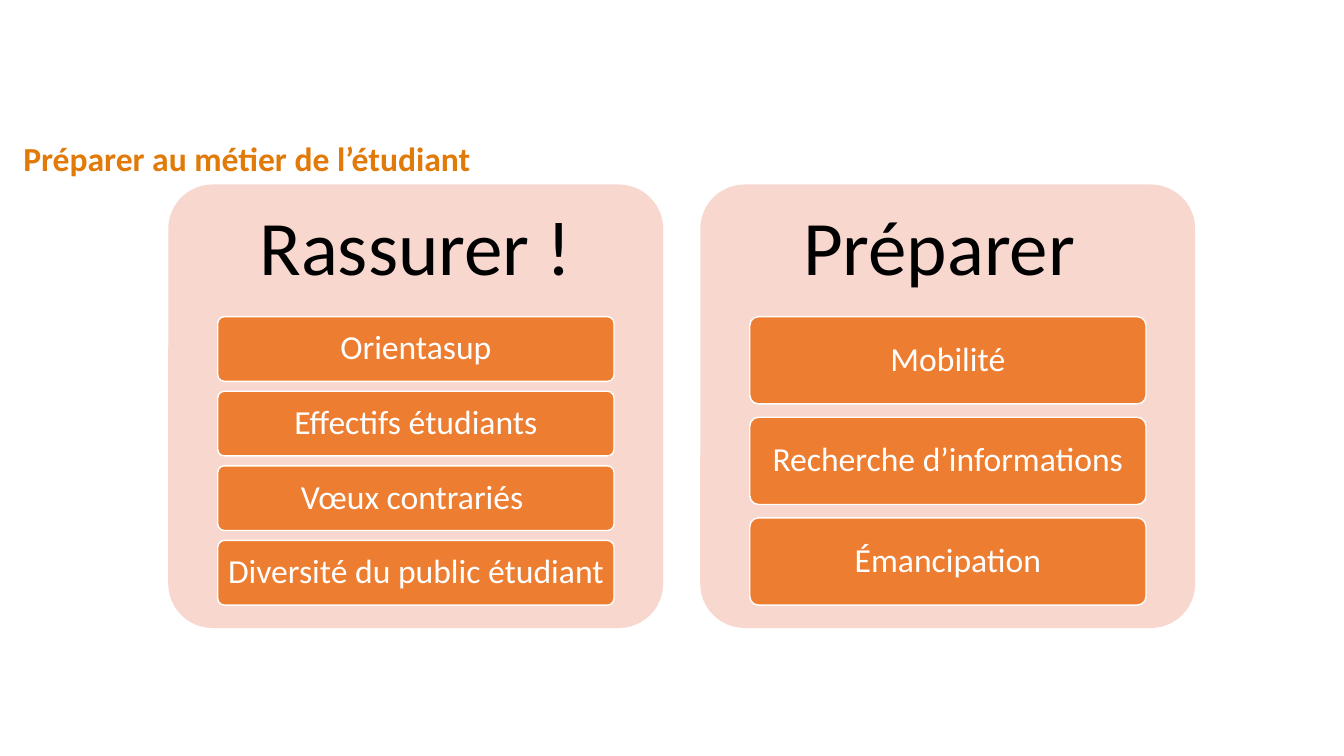
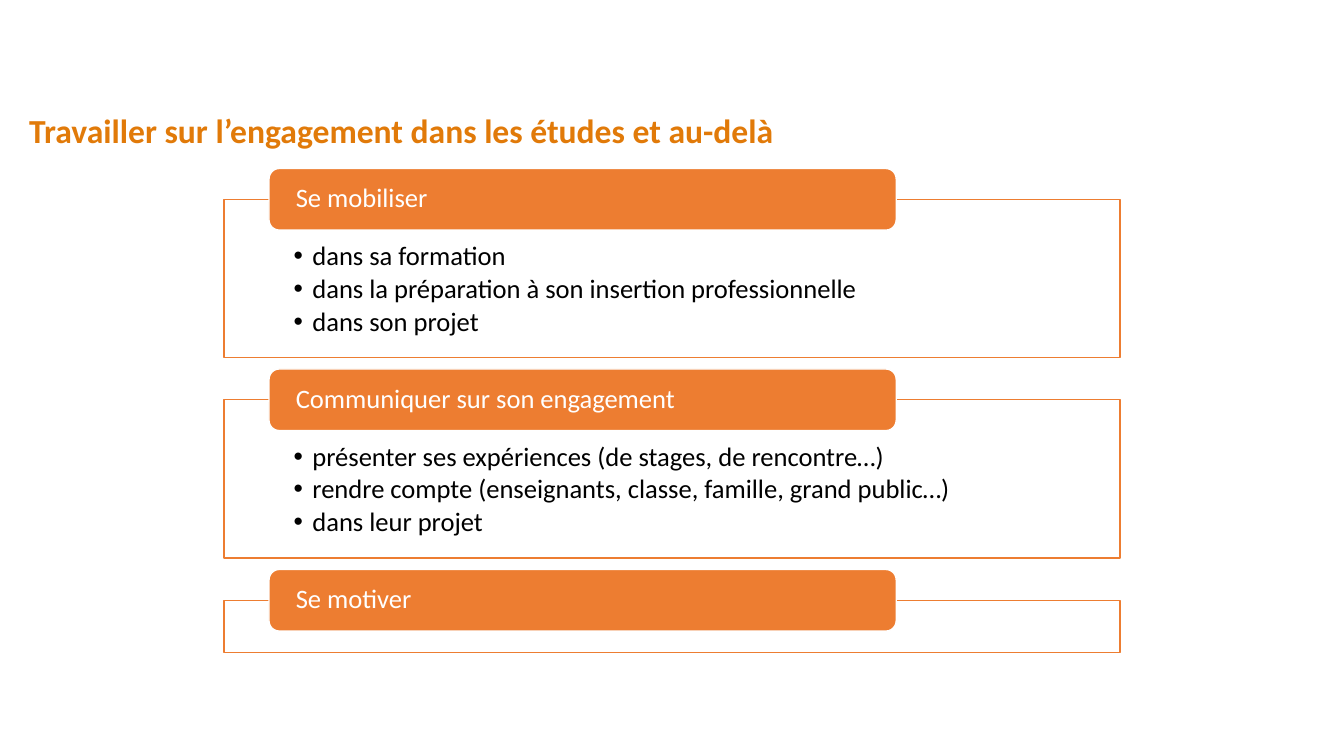
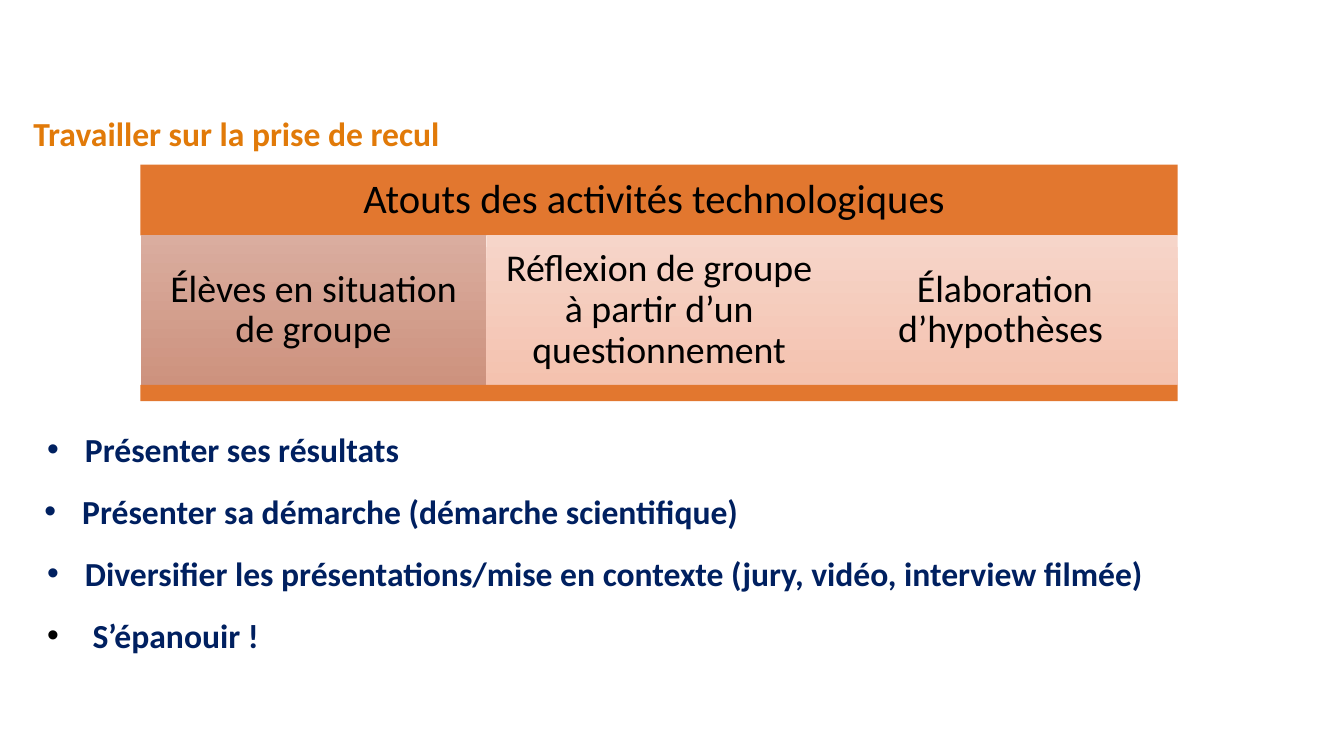
import pptx
import pptx.util
import pptx.dml.color
import pptx.enum.shapes
import pptx.enum.text
import lxml.etree

Pt = pptx.util.Pt
RGBColor = pptx.dml.color.RGBColor
Kind = pptx.enum.shapes.MSO_SHAPE
Align = pptx.enum.text.PP_ALIGN
Anchor = pptx.enum.text.MSO_ANCHOR

FONT = "Calibri"
GOLD = RGBColor(0xE1, 0x7A, 0x09)
ORANGE = RGBColor(0xED, 0x7D, 0x31)
RUST = RGBColor(0xE2, 0x77, 0x2F)
PINK = RGBColor(0xF8, 0xD7, 0xCE)
NAVY = RGBColor(0x00, 0x20, 0x60)
BLACK = RGBColor(0, 0, 0)
WHITE = RGBColor(0xFF, 0xFF, 0xFF)
DARK = [RGBColor(0xDA, 0xAD, 0x9F), RGBColor(0xCD, 0x92, 0x7E)]
LIGHT = [RGBColor(0xF6, 0xD5, 0xC9), RGBColor(0xF4, 0xC2, 0xAF)]


def write(shape, lines, size, color, bold=False, align=Align.LEFT, anchor=Anchor.MIDDLE,
          inset=(7.2, 3.6), space=0.9, after=0, marks=None):
    frame = shape.text_frame
    frame.word_wrap = True
    frame.auto_size = pptx.enum.text.MSO_AUTO_SIZE.NONE
    frame.vertical_anchor = anchor
    frame.margin_left = frame.margin_right = Pt(inset[0])
    frame.margin_top = frame.margin_bottom = Pt(inset[1])
    for i, line in enumerate(lines):
        para = frame.paragraphs[0] if i == 0 else frame.add_paragraph()
        para.alignment = align
        para.line_spacing = space
        para.space_before = Pt(0)
        para.space_after = Pt(after)
        run = para.add_run()
        run.text = line
        run.font.name = FONT
        run.font.size = Pt(size)
        run.font.bold = bold
        run.font.color.rgb = color
        if marks:
            left, hang, tint = marks[i]
            props = para._p.get_or_add_pPr()
            props.set("marL", str(Pt(left)))
            props.set("indent", str(Pt(-hang)))
            ns = "{" + props.nsmap["a"] + "}"
            hue = lxml.etree.SubElement(props, ns + "buClr")
            lxml.etree.SubElement(hue, ns + "srgbClr", val=str(tint))
            lxml.etree.SubElement(props, ns + "buFont", typeface="Arial")
            lxml.etree.SubElement(props, ns + "buChar", char="•")


def block(slide, kind, at, fill, line=None, round=None):
    shape = slide.shapes.add_shape(kind, *[Pt(v) for v in at])
    shape.shadow.inherit = False
    if isinstance(fill, list):
        shape.fill.gradient()
        shape.fill.gradient_angle = 270
        for stop, tint in zip(shape.fill.gradient_stops, fill):
            stop.color.rgb = tint
    else:
        shape.fill.solid()
        shape.fill.fore_color.rgb = fill
    if line is None:
        shape.line.fill.background()
    else:
        shape.line.color.rgb = line
        shape.line.width = Pt(1)
    if round is not None:
        shape.adjustments[0] = round
    return shape


deck = pptx.Presentation()
deck.slide_width = Pt(960)
deck.slide_height = Pt(540)

slides = []
for layout, name, left, top, width in [
    (5, "Préparer au métier de l’étudiant", 9.4, 95, 343),
    (5, "Travailler sur l’engagement dans les études et au-delà", 13.7, 75, 563),
    (1, "Travailler sur la prise de recul", 16.6, 77, 318),
]:
    slide = deck.slides.add_slide(deck.slide_layouts[layout])
    title = slide.shapes.title
    title.left, title.top, title.width, title.height = Pt(left), Pt(top), Pt(width), Pt(36)
    write(title, [name], 24, GOLD, bold=True, anchor=Anchor.TOP, space=1.0)
    slides.append(slide)
first, second, third = slides

panels = [
    ("Rassurer !", ["Orientasup", "Effectifs étudiants", "Vœux contrariés ", "Diversité du public étudiant"]),
    ("Préparer ", ["Mobilité", "Recherche d’informations", "Émancipation"]),
]
for col, (head, items) in enumerate(panels):
    left = 120.2 + col * 380
    panel = block(first, Kind.ROUNDED_RECTANGLE, (left, 131.8, 353.5, 316.8), PINK, round=0.1)
    write(panel, [head], 55, BLACK, align=Align.CENTER, anchor=Anchor.TOP, inset=(7.2, 8))
    high = 206 / (len(items) + (len(items) - 1) * 2 / 13)
    for row, item in enumerate(items):
        at = (left + 35.4, 226.2 + row * high * 15 / 13, 283, high)
        tile = block(first, Kind.ROUNDED_RECTANGLE, at, ORANGE, WHITE, 0.1)
        write(tile, [item], 24, WHITE, align=Align.CENTER, inset=(3, 3))

groups = [
    ("Se mobiliser", 113, [
        "dans sa formation",
        "dans la préparation à son insertion professionnelle",
        "dans son projet",
    ]),
    ("Communiquer sur son engagement", 113, [
        "présenter ses expériences (de stages, de rencontre…)",
        "rendre compte (enseignants, classe, famille, grand public…)",
        "dans leur projet",
    ]),
    ("Se motiver", 37.4, []),
]
top = 142.4
for head, high, items in groups:
    frame = block(second, Kind.RECTANGLE, (160, top, 640, high), WHITE, ORANGE)
    write(frame, items, 19, BLACK, anchor=Anchor.TOP, inset=(49.7, 31), after=2.85,
          marks=[(13.5, 13.5, BLACK)] * len(items))
    label = block(second, Kind.ROUNDED_RECTANGLE, (192.2, top - 22, 448, 44), ORANGE, WHITE)
    write(label, [head], 19, WHITE, inset=(17, 0))
    top += high + 30.2

banner = block(third, Kind.RECTANGLE, (100.2, 117.6, 741, 50.6), RUST)
write(banner, ["Atouts des activités technologiques "], 29, BLACK, align=Align.CENTER)
cells = [
    ("Élèves en situation de groupe", DARK),
    ("Réflexion de groupe à partir d’un questionnement", LIGHT),
    ("Élaboration d’hypothèses ", LIGHT),
]
for col, (item, fill) in enumerate(cells):
    cell = block(third, Kind.RECTANGLE, (100.5 + col * 246.9, 168.2, 246.9, 106.8), fill)
    write(cell, [item], 27, BLACK, align=Align.CENTER, inset=(8, 8))
block(third, Kind.RECTANGLE, (100.2, 275, 741, 11.6), RUST)

body = third.placeholders[1]
body.left, body.top, body.width, body.height = Pt(24.5), Pt(302.4), Pt(865), Pt(172)
points = [
    ("Présenter ses résultats", (29, 27, NAVY)),
    ("Présenter sa démarche (démarche scientifique)", (27, 27, NAVY)),
    ("Diversifier les présentations/mise en contexte (jury, vidéo, interview filmée)", (29, 27, NAVY)),
    ("S’épanouir !", (34.4, 32.4, BLACK)),
]
write(body, [text for text, mark in points], 24, NAVY, bold=True, anchor=Anchor.TOP,
      space=1.0, after=15.6, marks=[mark for text, mark in points])

deck.save("out.pptx")
